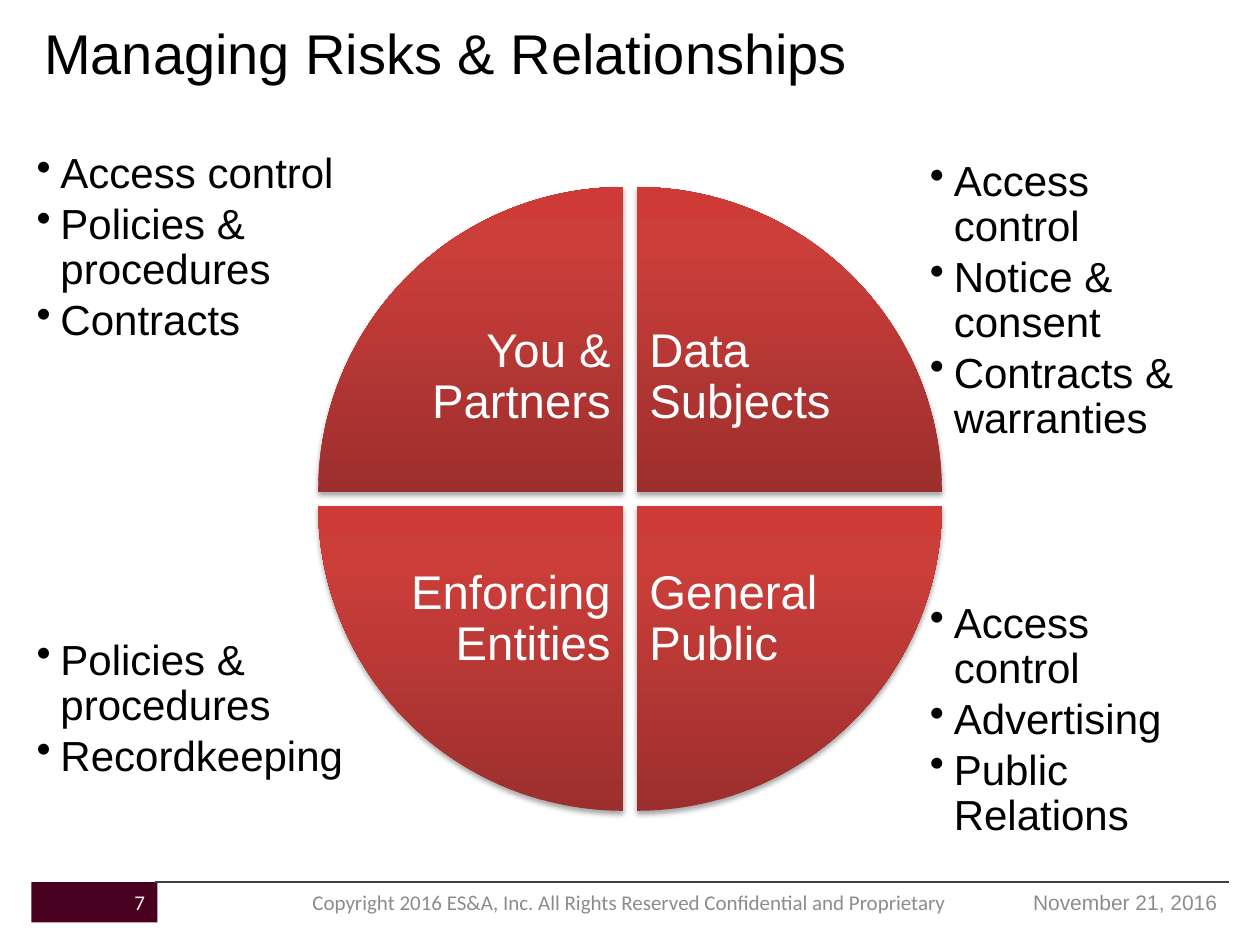
import math
from copy import deepcopy

from lxml import etree
from pptx import Presentation
from pptx.dml.color import RGBColor
from pptx.enum.shapes import MSO_CONNECTOR, MSO_SHAPE
from pptx.enum.text import MSO_ANCHOR, PP_ALIGN
from pptx.oxml.ns import qn
from pptx.util import Inches, Pt

RECTANGLE = MSO_SHAPE.RECTANGLE
STRAIGHT = MSO_CONNECTOR.STRAIGHT
TOP, MIDDLE = MSO_ANCHOR.TOP, MSO_ANCHOR.MIDDLE
LEFT, CENTER, RIGHT = PP_ALIGN.LEFT, PP_ALIGN.CENTER, PP_ALIGN.RIGHT

TITLE_ONLY = 5
WEDGE_STOPS = [(0, "9C2F2D"), (0.8, "CB3E3A"), (1, "CE3B37")]
RADIUS, GAP = 2.42, 0.11
ARC_STEPS = 45
# sides are -1 for left or top and 1 for right or bottom
QUADRANTS = [(-1, -1, "You & Partners"), (1, -1, "Data Subjects"),
             (1, 1, "General Public"), (-1, 1, "Enforcing Entities")]
# box, insets (left, top, right, bottom), items
PANELS = [
    ((6.32, 4.58, 3.4, 2.12), (1.06, 0.2, 0.04, 0.04),
     ["Access control", "Advertising", "Public Relations"]),
    ((0.25, 4.58, 3.4, 2.12), (0.04, 0.49, 0.8, 0.04),
     ["Policies & procedures", "Recordkeeping"]),
    ((6.32, 1.17, 3.4, 2.17), (1.06, 0.1, 0, 0.04),
     ["Access control", "Notice & consent", "Contracts & warranties"]),
    ((0.25, 1.17, 3.4, 2.17), (0.04, 0.04, 1, 0.49),
     ["Access control", "Policies & procedures", "Contracts"]),
]


def rgb(value):
    return RGBColor.from_string(value)


def inches(values):
    return [Inches(value) for value in values]


def style(paragraph, size, color, align=LEFT, face="Arial"):
    paragraph.alignment = align
    paragraph.font.size = Pt(size)
    paragraph.font.name = face
    paragraph.font.color.rgb = rgb(color)


def set_frame(frame, anchor, insets):
    frame.word_wrap = True
    frame.vertical_anchor = anchor
    (frame.margin_left, frame.margin_top,
     frame.margin_right, frame.margin_bottom) = inches(insets)


def add_bullet(paragraph):
    properties = paragraph._p.get_or_add_pPr()
    properties.set("marL", str(Inches(0.19)))
    properties.set("indent", str(-Inches(0.19)))
    etree.SubElement(properties, qn("a:buChar"), char="•")


def add_rectangle(slide, box, color):
    rectangle = slide.shapes.add_shape(RECTANGLE, *inches(box))
    rectangle.shadow.inherit = False
    rectangle.fill.solid()
    rectangle.fill.fore_color.rgb = rgb(color)
    rectangle.line.fill.background()
    return rectangle


def add_title(slide, box, text):
    title = slide.shapes.title
    title.left, title.top, title.width, title.height = inches(box)
    title.text_frame.text = text
    title.text_frame.vertical_anchor = TOP
    style(title.text_frame.paragraphs[0], 32, "000000")


def add_panel(slide, box, insets, items):
    panel = add_rectangle(slide, box, "FFFFFF")
    panel_color = panel._element.spPr.find(qn("a:solidFill"))[0]
    etree.SubElement(panel_color, qn("a:alpha"), val="90000")
    frame = panel.text_frame
    set_frame(frame, TOP, insets)
    for index, item in enumerate(items):
        paragraph = frame.add_paragraph() if index else frame.paragraphs[0]
        paragraph.text = item
        paragraph.line_spacing = 0.9
        paragraph.space_after = Pt(3)
        add_bullet(paragraph)
        style(paragraph, 24, "000000")


def fill_wedge(wedge):
    wedge.fill.gradient()
    stop_list = wedge._element.spPr.find(qn("a:gradFill")).find(qn("a:gsLst"))
    stop_list.append(deepcopy(stop_list[-1]))
    for stop, (position, color) in zip(wedge.fill.gradient_stops, WEDGE_STOPS):
        stop.position = position
        stop.color.rgb = rgb(color)
    wedge.fill.gradient_angle = 90
    wedge.line.fill.background()


def add_shadow(wedge):
    wedge.shadow.inherit = False
    effects = wedge._element.spPr.find(qn("a:effectLst"))
    shadow = etree.SubElement(
        effects, qn("a:outerShdw"), blurRad=str(Pt(3.1)), dist=str(Pt(1.8)),
        dir="5400000", rotWithShape="0")
    color = etree.SubElement(shadow, qn("a:srgbClr"), val="000000")
    etree.SubElement(color, qn("a:alpha"), val="35000")


def add_wedge(slide, center, side_x, side_y, label):
    """Draw a quarter disc on the given sides of the wheel's center."""
    corner_x = center[0] + side_x * GAP / 2
    corner_y = center[1] + side_y * GAP / 2
    angles = [math.pi / 2 * step / ARC_STEPS for step in range(ARC_STEPS + 1)]
    arc = [(Inches(corner_x + side_x * RADIUS * math.cos(angle)),
            Inches(corner_y + side_y * RADIUS * math.sin(angle)))
           for angle in angles]
    builder = slide.shapes.build_freeform(Inches(corner_x), Inches(corner_y))
    builder.add_line_segments(arc, close=True)
    wedge = builder.convert_to_shape()
    fill_wedge(wedge)
    add_shadow(wedge)

    inner, outer = 0.1, 0.71
    horizontal = (outer, inner) if side_x < 0 else (inner, outer)
    vertical = (outer, inner) if side_y < 0 else (inner, outer)
    frame = wedge.text_frame
    set_frame(frame, MIDDLE,
              (horizontal[0], vertical[0], horizontal[1], vertical[1]))
    frame.text = label
    frame.paragraphs[0].line_spacing = 0.9
    style(frame.paragraphs[0], 27, "FFFFFF", RIGHT if side_x < 0 else LEFT)


def add_wheel(slide, center):
    for side_x, side_y, label in QUADRANTS:
        add_wedge(slide, center, side_x, side_y, label)


def add_footer(slide, left, top, right, height):
    add_rectangle(slide, (left, top, 1, height), "49001E")
    rule = slide.shapes.add_connector(
        STRAIGHT, *inches((left + 0.98, top, right, top)))
    rule.line.color.rgb = rgb("404040")
    rule.line.width = Pt(0.75)
    etree.SubElement(rule._element.spPr, qn("a:effectLst"))
    notes = [
        (7.67, 2.09, "November 21, 2016", "8C8C8C", RIGHT, "Arial"),
        (2.33, 5.33, "Copyright 2016 ES&A, Inc. All Rights Reserved "
         "Confidential and Proprietary", "8C8C8C", CENTER, "Calibri"),
        (left, 1, "7", "F2F2F2", RIGHT, "Calibri"),
    ]
    for note_left, width, text, color, align, face in notes:
        note = slide.shapes.add_textbox(
            *inches((note_left, top, width, height)))
        set_frame(note.text_frame, MIDDLE, (0.1, 0.05, 0.1, 0.05))
        note.text_frame.text = text
        style(note.text_frame.paragraphs[0], 12, color, align, face)


def main():
    presentation = Presentation()
    presentation.slide_width = Inches(10)
    presentation.slide_height = Inches(7.5)
    slide = presentation.slides.add_slide(
        presentation.slide_layouts[TITLE_ONLY])
    add_title(slide, (0.25, 0.1, 8, 1.2), "Managing Risks & Relationships")
    for box, insets, items in PANELS:
        add_panel(slide, box, insets, items)
    add_wheel(slide, (5, 3.96))
    add_footer(slide, 0.25, 7, 9.75, 0.32)
    presentation.save("out.pptx")


if __name__ == "__main__":
    main()
